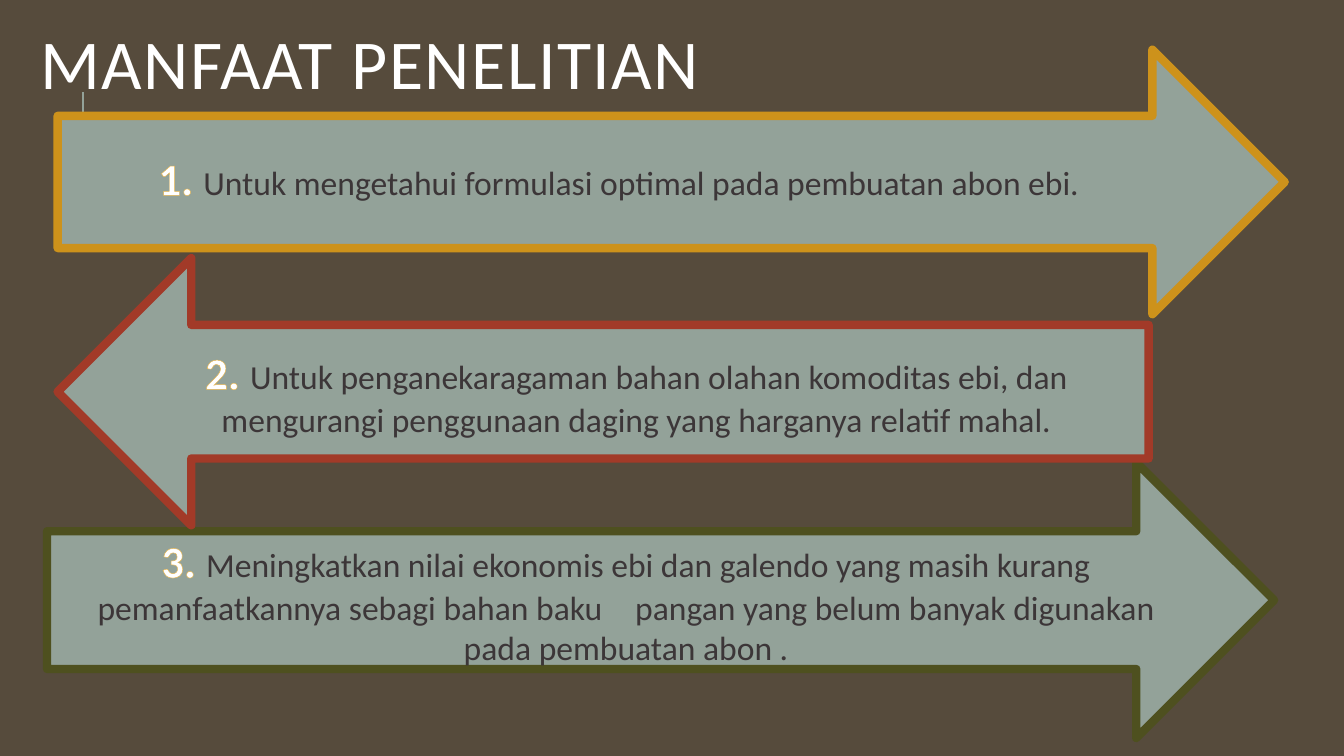
from dataclasses import dataclass

from lxml.etree import SubElement
from pptx import Presentation
from pptx.dml.color import RGBColor as RGB
from pptx.enum.shapes import MSO_CONNECTOR, MSO_SHAPE
from pptx.enum.text import MSO_ANCHOR as ANCHOR, MSO_AUTO_SIZE as AUTO, PP_ALIGN as ALIGN
from pptx.oxml import parse_xml
from pptx.oxml.ns import nsdecls, qn
from pptx.util import Cm, Pt


@dataclass(frozen=True)
class Theme:
    font: str = "Calibri"
    background: str = "564B3C"
    sage: str = "93A299"
    white: str = "FFFFFF"
    ink: str = "3C3638"
    glow: str = "E8B54D"
    gold: str = "CD921B"
    red: str = "A23A28"
    olive: str = "4E501F"
    title_size: float = 37.5
    number_size: float = 24
    body_size: float = 18
    border: float = 4.5
    rule: float = 1.5


T = Theme()


def cm(*lengths):
    return [Cm(v) for v in lengths]


def style_run(r, size, color, bold=False):
    formats = {"name": T.font, "size": Pt(size), "bold": bold}
    for name, value in formats.items():
        setattr(r.font, name, value)
    r.font.color.rgb = RGB.from_string(color)


def outline_run(r):
    """Draw a thin coloured contour around the letters."""
    r.font._element.insert(0, parse_xml(
        f'<a:ln {nsdecls("a")} w="{Pt(0.8)}"><a:solidFill>'
        f'<a:srgbClr val="{T.glow}"/></a:solidFill></a:ln>'))


def set_title(s, text):
    title = s.shapes.title
    title.left, title.top, title.width, title.height = cm(0.51, -0.25, 20.24, 3.12)
    tf = title.text_frame
    formats = {"word_wrap": True, "auto_size": AUTO.NONE, "vertical_anchor": ANCHOR.MIDDLE}
    for name, value in formats.items():
        setattr(tf, name, value)
    p = tf.paragraphs[0]
    p.alignment, p.line_spacing = ALIGN.LEFT, 0.8
    r = p.add_run()
    r.text = text
    style_run(r, T.title_size, T.white)
    r.font._element.set("spc", "80")


def add_rule(s):
    line = s.shapes.add_connector(MSO_CONNECTOR.STRAIGHT, *cm(1.57, 3.63, 1.57, 1.73))
    line.line.color.rgb = RGB.from_string(T.sage)
    line.line.width = Pt(T.rule)
    SubElement(line._element.spPr, qn("a:effectLst"))


def add_arrow(s, kind, box, border):
    arrow = s.shapes.add_shape(kind, *cm(*box))
    arrow.shadow.inherit = False
    arrow.fill.solid()
    arrow.fill.fore_color.rgb = RGB.from_string(T.sage)
    arrow.line.color.rgb = RGB.from_string(border)
    arrow.line.width = Pt(T.border)
    SubElement(arrow.line._get_or_add_ln(), qn("a:round"))
    return arrow


def write_benefit(shape, number, text):
    """Centre a contoured number and its sentence in the shape."""
    tf = shape.text_frame
    tf.word_wrap = True
    p = tf.paragraphs[0]
    p.alignment = ALIGN.CENTER
    label, body = p.add_run(), p.add_run()
    label.text, body.text = f"{number}. ", text
    style_run(label, T.number_size, T.white, bold=True)
    outline_run(label)
    style_run(body, T.body_size, T.ink)


def main():
    prs = Presentation()
    prs.slide_width, prs.slide_height = cm(25.4, 14.29)
    s = prs.slides.add_slide(prs.slide_layouts[5])
    s.background.fill.solid()
    s.background.fill.fore_color.rgb = RGB.from_string(T.background)

    set_title(s, "MANFAAT PENELITIAN")
    add_rule(s)

    right, left = MSO_SHAPE.RIGHT_ARROW, MSO_SHAPE.LEFT_ARROW
    add_arrow(s, right, (1.09, 0.94, 23.19, 5), T.gold)
    third = add_arrow(s, right, (0.89, 8.74, 23.19, 5.21), T.olive)
    second = add_arrow(s, left, (1.09, 4.88, 20.62, 5.05), T.red)
    first = s.shapes.add_textbox(*cm(1.5, 2.72, 20.4, 1.27))
    first.text_frame.auto_size = AUTO.SHAPE_TO_FIT_TEXT

    benefits = [
        (first, "Untuk mengetahui formulasi optimal pada pembuatan abon ebi."),
        (second, "Untuk penganekaragaman bahan olahan komoditas ebi, dan mengurangi "
                 "penggunaan daging yang harganya relatif mahal."),
        (third, "Meningkatkan nilai ekonomis ebi dan galendo yang masih kurang "
                "pemanfaatkannya sebagi bahan baku \tpangan yang belum banyak "
                "digunakan pada pembuatan abon ."),
    ]
    for number, (shape, text) in enumerate(benefits, 1):
        write_benefit(shape, number, text)

    prs.save("out.pptx")


if __name__ == "__main__":
    main()
